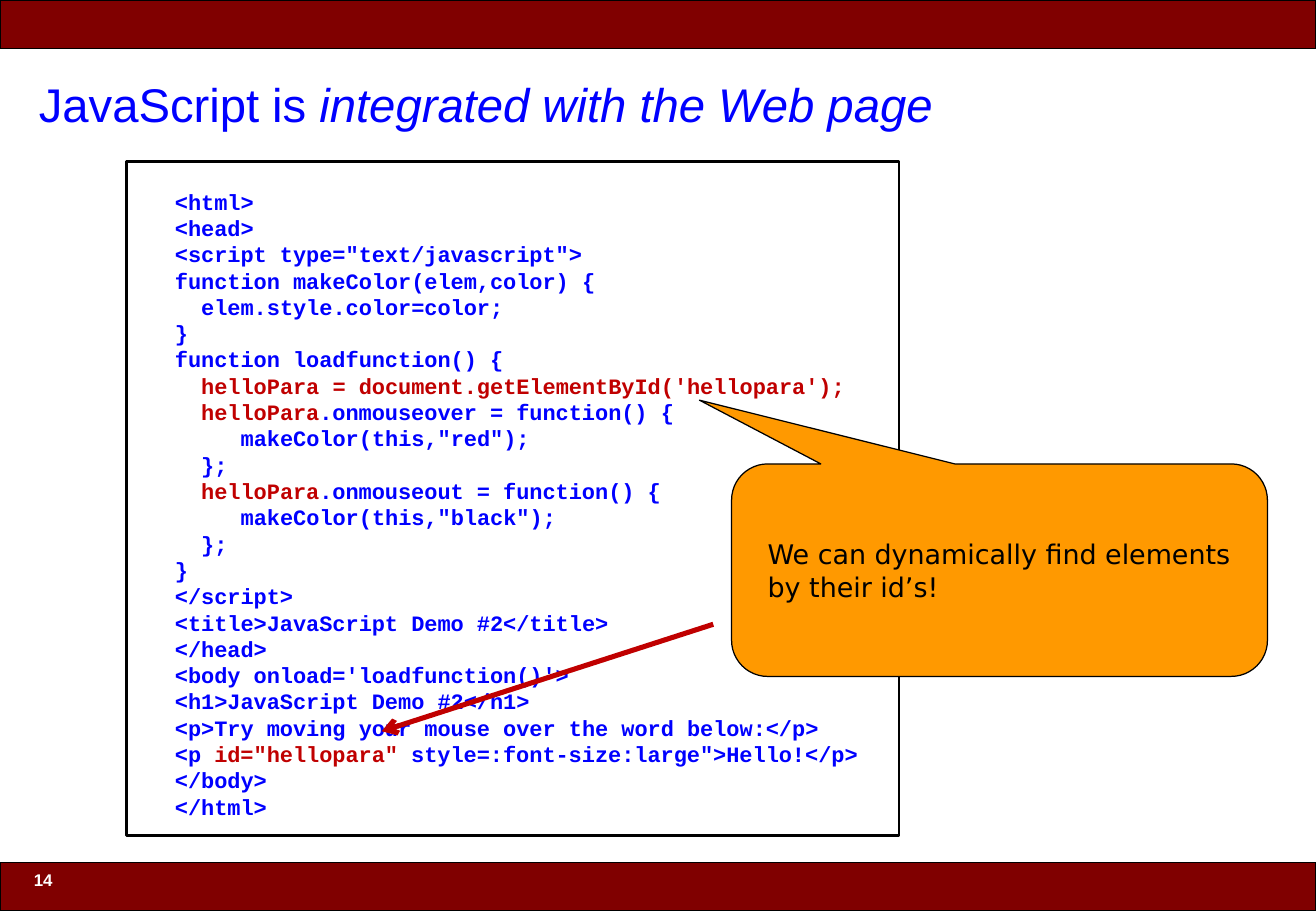
import pptx
import pptx.dml.color
import pptx.enum.shapes
import pptx.enum.text
import pptx.oxml
import pptx.oxml.ns
import pptx.util

SHAPES = pptx.enum.shapes.MSO_SHAPE
ANCHORS = pptx.enum.text.MSO_ANCHOR
BLUE, RED, MAROON, ORANGE = "0000FF", "C00000", "800000", "FF9900"
BLACK, WHITE = "000000", "FFFFFF"
CODE_SIZE, CODE_LEADING, CHARACTER_WIDTH = 13, 15.6, 7.8
BAR_HEIGHT = 5.33

CODE = """<html>
<head>
<script type="text/javascript">
function makeColor(elem,color) {
  elem.style.color=color;
}
function loadfunction() {
  |helloPara = document.getElementById('hellopara');
  |helloPara|.onmouseover = function() {
     makeColor(this,"red");
  };
  |helloPara|.onmouseout = function() {
     makeColor(this,"black");
  };
}
</script>
<title>JavaScript Demo #2</title>
</head>
<body onload='loadfunction()'>
<h1>JavaScript Demo #2</h1>
<p>Try moving your mouse over the word below:</p>
<p |id="hellopara"| style=:font-size:large">Hello!</p>
</body>
</html>"""


def rgb(value):
    return pptx.dml.color.RGBColor.from_string(value)


class SlideBuilder:
    """Places styled elements on one slide, with lengths in percent of its size."""

    def __init__(self, width, height):
        self.presentation = pptx.Presentation()
        self.presentation.slide_width = pptx.util.Inches(width)
        self.presentation.slide_height = pptx.util.Inches(height)
        layout = self.presentation.slide_layouts[5]
        self.slide = self.presentation.slides.add_slide(layout)

    def across(self, percent):
        return round(self.presentation.slide_width * percent / 100)

    def down(self, percent):
        return round(self.presentation.slide_height * percent / 100)

    def box(self, left, top, width, height):
        return self.across(left), self.down(top), self.across(width), self.down(height)

    def run(self, paragraph, text, size, color, font="Arial", bold=False, italic=False):
        run = paragraph.add_run()
        run.text = text
        run.font.name, run.font.size = font, pptx.util.Pt(size)
        run.font.bold, run.font.italic = bold, italic
        run.font.color.rgb = rgb(color)

    def frame(self, shape, anchor, insets=(0.1, 0.05, 0.1, 0.05)):
        frame = shape.text_frame
        frame.word_wrap = True
        frame.auto_size = pptx.enum.text.MSO_AUTO_SIZE.NONE
        frame.vertical_anchor = anchor
        (frame.margin_left, frame.margin_top,
         frame.margin_right, frame.margin_bottom) = map(pptx.util.Inches, insets)
        frame.paragraphs[0].alignment = pptx.enum.text.PP_ALIGN.LEFT
        return frame

    def shape(self, kind, place, fill=None, line_width=0.75):
        shape = self.slide.shapes.add_shape(kind, *self.box(*place))
        shape.shadow.inherit = False
        if fill:
            shape.fill.solid()
            shape.fill.fore_color.rgb = rgb(fill)
        else:
            shape.fill.background()
        shape.line.color.rgb = rgb(BLACK)
        shape.line.width = pptx.util.Pt(line_width)
        return shape

    def title(self, place, plain, emphasized):
        title = self.slide.shapes.title
        title.left, title.top, title.width, title.height = self.box(*place)
        paragraph = self.frame(title, ANCHORS.BOTTOM).paragraphs[0]
        paragraph.line_spacing = 0.9
        self.run(paragraph, plain, 28, BLUE)
        self.run(paragraph, emphasized, 28, BLUE, italic=True)

    def page_number(self, place, text):
        shape = self.slide.shapes.add_textbox(*self.box(*place))
        paragraph = self.frame(shape, ANCHORS.TOP).paragraphs[0]
        self.run(paragraph, text, 10, WHITE, bold=True)

    def code(self, place, source):
        shape = self.shape(SHAPES.RECTANGLE, place, line_width=1.5)
        frame = self.frame(shape, ANCHORS.TOP, (0.4, 0.22, 0.2, 0))
        for index, line in enumerate(source.splitlines()):
            paragraph = frame.add_paragraph() if index else frame.paragraphs[0]
            paragraph.alignment = pptx.enum.text.PP_ALIGN.LEFT
            paragraph.line_spacing = pptx.util.Pt(CODE_LEADING)
            text = line.lstrip()
            indent = pptx.util.Pt((len(line) - len(text)) * CHARACTER_WIDTH)
            paragraph._p.get_or_add_pPr().set("marL", str(int(indent)))
            for position, part in enumerate(text.split("|")):
                if part:
                    color = RED if position % 2 else BLUE
                    self.run(paragraph, part, CODE_SIZE, color, "Courier New", bold=True)

    def callout(self, place, adjustments, text):
        shape = self.shape(SHAPES.ROUNDED_RECTANGULAR_CALLOUT, place, ORANGE)
        for index, value in enumerate(adjustments):
            shape.adjustments[index] = value
        frame = self.frame(shape, ANCHORS.MIDDLE, (0.21, 0.05, 0.1, 0.05))
        self.run(frame.paragraphs[0], text, 16, BLACK, "DejaVu Sans")

    def arrow(self, start, end):
        connector = self.slide.shapes.add_connector(
            pptx.enum.shapes.MSO_CONNECTOR.STRAIGHT,
            self.across(start[0]), self.down(start[1]),
            self.across(end[0]), self.down(end[1]))
        connector.line.color.rgb = rgb(RED)
        connector.line.width = pptx.util.Pt(3)
        namespace = pptx.oxml.ns.nsdecls("a")
        connector.line._get_or_add_ln().append(
            pptx.oxml.parse_xml(f'<a:tailEnd {namespace} type="arrow"/>'))
        connector._element.spPr.append(
            pptx.oxml.parse_xml(f"<a:effectLst {namespace}/>"))


def main():
    builder = SlideBuilder(10.83, 7.5)
    for top in (0, 100 - BAR_HEIGHT):
        builder.shape(SHAPES.RECTANGLE, (0, top, 100, BAR_HEIGHT), MAROON)
    builder.title((2.03, 7.87, 90.21, 7.33),
                  "JavaScript is ", "integrated with the Web page")
    builder.page_number((1.66, 94.8, 11, 4.67), "14")
    builder.code((9.6, 17.73, 58.73, 74), CODE)
    builder.callout((55.59, 50.93, 40.72, 23.33), (-0.56, -0.8, 0.17),
                    "We can dynamically find elements by their id’s!")
    builder.arrow((54.2, 68.53), (29, 80.27))
    builder.presentation.save("out.pptx")


if __name__ == "__main__":
    main()
